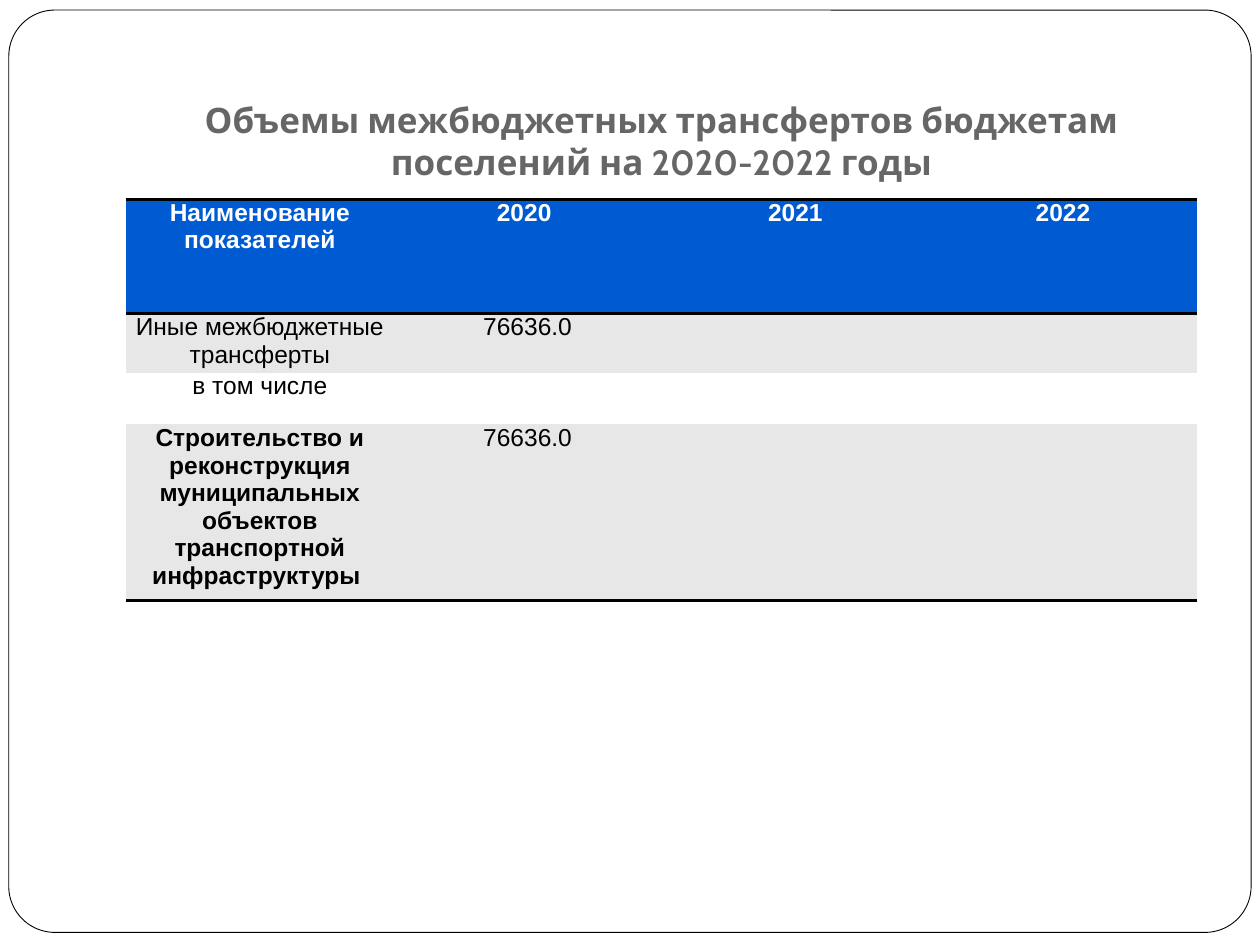
import pptx
import pptx.dml.color
import pptx.enum.shapes
import pptx.enum.text
import pptx.oxml.ns
import pptx.util
from lxml import etree
from pptx.util import Inches

NO_GRID_STYLE = "{2D5ABB26-0587-4C30-8999-92F81FD0307C}"
HEADER = ["Наименование показателей", "2020 ", "2021", "2022"]
ROWS = [
    ["Иные межбюджетные трансферты", "76636.0", "", ""],
    ["в том числе", "", "", ""],
    ["Строительство и реконструкция муниципальных объектов "
     "транспортной инфраструктуры ", "76636.0", "", ""],
]
ROW_HEIGHTS = [0.91, 0.44, 0.41, 1.31]


def rgb(color):
    return pptx.dml.color.RGBColor.from_string(color)


def write(tf, text, size=14, font="Arial", color="000000", bold=False):
    p = tf.paragraphs[0]
    p.alignment = pptx.enum.text.PP_ALIGN.CENTER
    r = p.add_run()
    r.text = text
    r.font.size = pptx.util.Pt(size)
    r.font.name = font
    r.font.bold = bold
    r.font.color.rgb = rgb(color)


def add_border(cell, side, color="000000", width=2):
    qn = pptx.oxml.ns.qn
    tc_pr = cell._tc.get_or_add_tcPr()
    ln = etree.SubElement(tc_pr, qn("a:" + side), w=str(pptx.util.Pt(width)))
    fill = etree.SubElement(ln, qn("a:solidFill"))
    etree.SubElement(fill, qn("a:srgbClr"), val=color)


def add_frame(s, left, top, width, height):
    sp = s.shapes.add_shape(pptx.enum.shapes.MSO_SHAPE.ROUNDED_RECTANGLE,
                            left, top, width, height)
    sp.adjustments[0] = 0.05
    sp.shadow.inherit = False
    sp.fill.solid()
    sp.fill.fore_color.rgb = rgb("FFFFFF")
    sp.line.color.rgb = rgb("000000")
    sp.line.width = pptx.util.Pt(0.5)


def add_title(s, left, top, width, height):
    tf = s.shapes.add_textbox(left, top, width, height).text_frame
    tf.word_wrap = True
    tf.vertical_anchor = pptx.enum.text.MSO_ANCHOR.BOTTOM
    tf.margin_bottom = Inches(0.1)
    write(tf, "Объемы межбюджетных трансфертов бюджетам поселений на 2020-2022 годы",
          size=20, font="Cabin", color="666666", bold=True)


def add_transfers_table(s, left, top, width, height):
    data = [HEADER] + ROWS
    last = len(data) - 1
    table = s.shapes.add_table(len(data), len(HEADER), left, top, width, height).table
    table._tbl.tblPr.find(pptx.oxml.ns.qn("a:tableStyleId")).text = NO_GRID_STYLE
    for column in table.columns:
        column.width = width // len(HEADER)

    for i, texts in enumerate(data):
        table.rows[i].height = Inches(ROW_HEIGHTS[i])
        for j, text in enumerate(texts):
            cell = table.cell(i, j)
            # Rules above and below the header and under the last row
            if i == 0:
                add_border(cell, "lnT")
            if i in (0, last):
                add_border(cell, "lnB")
            # Header fill, then alternating bands
            cell.fill.solid()
            band = "E7E7E7" if i % 2 else "FFFFFF"
            cell.fill.fore_color.rgb = rgb("005BD3" if i == 0 else band)
            if text:
                cell.margin_left = cell.margin_right = Inches(0.07)
                cell.margin_top = cell.margin_bottom = 0
                write(cell.text_frame, text,
                      color="FFFFFF" if i == 0 else "000000",
                      bold=i == 0 or (i == last and j == 0))


def main():
    prs = pptx.Presentation()
    prs.slide_width, prs.slide_height = Inches(10), Inches(7.5)
    s = prs.slides.add_slide(prs.slide_layouts[6])
    add_frame(s, Inches(0.07), Inches(0.08), Inches(9.86), Inches(7.32))
    add_title(s, Inches(1), Inches(0.3), Inches(8.5), Inches(1.25))
    add_transfers_table(s, Inches(1), Inches(1.58), Inches(8.5),
                        Inches(sum(ROW_HEIGHTS)))
    prs.save("out.pptx")


if __name__ == "__main__":
    main()
